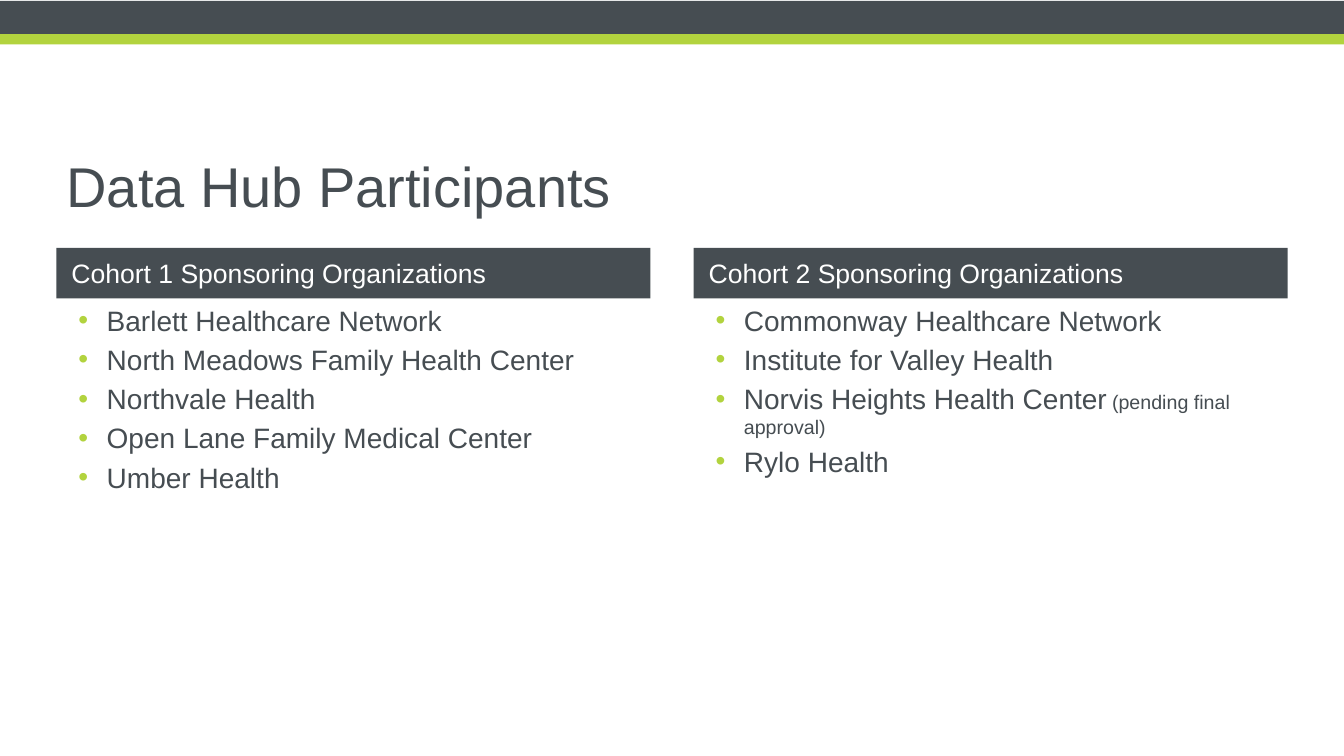
from pptx import Presentation
from pptx.dml.color import RGBColor
from pptx.enum.shapes import MSO_SHAPE
from pptx.enum.text import MSO_ANCHOR, PP_ALIGN
from pptx.oxml.ns import qn
from pptx.util import Inches, Pt
from lxml import etree

RECT = MSO_SHAPE.RECTANGLE
MIDDLE = MSO_ANCHOR.MIDDLE
TOP = MSO_ANCHOR.TOP
LEFT = PP_ALIGN.LEFT

COLORS = {"slate": "464D52", "lime": "B2D33E", "white": "FFFFFF"}
FONT = "Arial"
SLIDE_W, SLIDE_H = 13.33, 7.5
HEADER_H = 0.5

COHORTS = [
    ("Cohort 1 Sponsoring Organizations", 5.89, [
        [("Barlett Healthcare Network", 20)],
        [("North Meadows Family Health Center", 20)],
        [("Northvale Health", 20)],
        [("Open Lane Family Medical Center", 20)],
        [("Umber Health", 20)],
    ]),
    ("Cohort 2 Sponsoring Organizations", 6.28, [
        [("Commonway Healthcare Network", 20)],
        [("Institute for Valley Health", 20)],
        [("Norvis Heights Health Center", 20), (" ", 12),
         ("(pending final approval)", 14)],
        [("Rylo Health", 20)],
    ]),
]


def rgb(name):
    return RGBColor.from_string(COLORS[name])


def add_run(p, text, size, color):
    r = p.add_run()
    r.text = text
    r.font.name = FONT
    r.font.size = Pt(size)
    r.font.color.rgb = rgb(color)


def add_rect(slide, x, y, w, h, color):
    sp = slide.shapes.add_shape(RECT, Inches(x), Inches(y), Inches(w), Inches(h))
    sp.shadow.inherit = False
    sp.fill.solid()
    sp.fill.fore_color.rgb = rgb(color)
    sp.line.fill.background()
    return sp


def set_indent(p, margin, indent):
    pPr = p._p.get_or_add_pPr()
    pPr.set("marL", str(Inches(margin)))
    pPr.set("indent", str(Inches(indent)))
    return pPr


def add_bullet(p):
    pPr = set_indent(p, 0.4, -0.28)
    clr = etree.SubElement(pPr, qn("a:buClr"))
    etree.SubElement(clr, qn("a:srgbClr"), val=COLORS["lime"])
    etree.SubElement(pPr, qn("a:buFont"), typeface=FONT)
    etree.SubElement(pPr, qn("a:buChar"), char="•")


def add_banner(slide, x, y, w):
    add_rect(slide, x, y, w, 0.34, "slate")
    add_rect(slide, x, y + 0.33, w, 0.1, "lime")


def add_title(slide, x, y, w, h):
    sp = slide.shapes.title
    sp.left, sp.top, sp.width, sp.height = map(Inches, (x, y, w, h))
    tf = sp.text_frame
    tf.word_wrap = True
    tf.vertical_anchor = MIDDLE
    p = tf.paragraphs[0]
    p.alignment = LEFT
    add_run(p, "Data Hub Participants", 40, "slate")


def add_cohort(slide, x, y, w, h, heading, list_w, members):
    sp = add_rect(slide, x, y, w, HEADER_H, "slate")
    tf = sp.text_frame
    tf.word_wrap = True
    tf.vertical_anchor = MIDDLE
    p = tf.paragraphs[0]
    p.alignment = LEFT
    p.space_before = Pt(3)
    set_indent(p, 0.05, 0)
    add_run(p, heading, 19, "white")

    sp = slide.shapes.add_textbox(Inches(x), Inches(y + HEADER_H),
                                  Inches(list_w), Inches(h - HEADER_H))
    tf = sp.text_frame
    tf.word_wrap = True
    tf.vertical_anchor = TOP
    for i, runs in enumerate(members):
        p = tf.add_paragraph() if i else tf.paragraphs[0]
        p.alignment = LEFT
        p.space_before = Pt(4)
        add_bullet(p)
        for text, size in runs:
            add_run(p, text, size, "slate")


def main():
    prs = Presentation()
    prs.slide_width, prs.slide_height = Inches(SLIDE_W), Inches(SLIDE_H)
    slide = prs.slides.add_slide(prs.slide_layouts[5])
    add_banner(slide, 0, 0.01, SLIDE_W)
    add_title(slide, 0.56, 1.25, 12.22, 1.17)
    for i, (heading, list_w, members) in enumerate(COHORTS):
        add_cohort(slide, 0.56 + i * 6.32, 2.46, 5.89, 4.75,
                   heading, list_w, members)
    prs.save("out.pptx")


if __name__ == "__main__":
    main()
